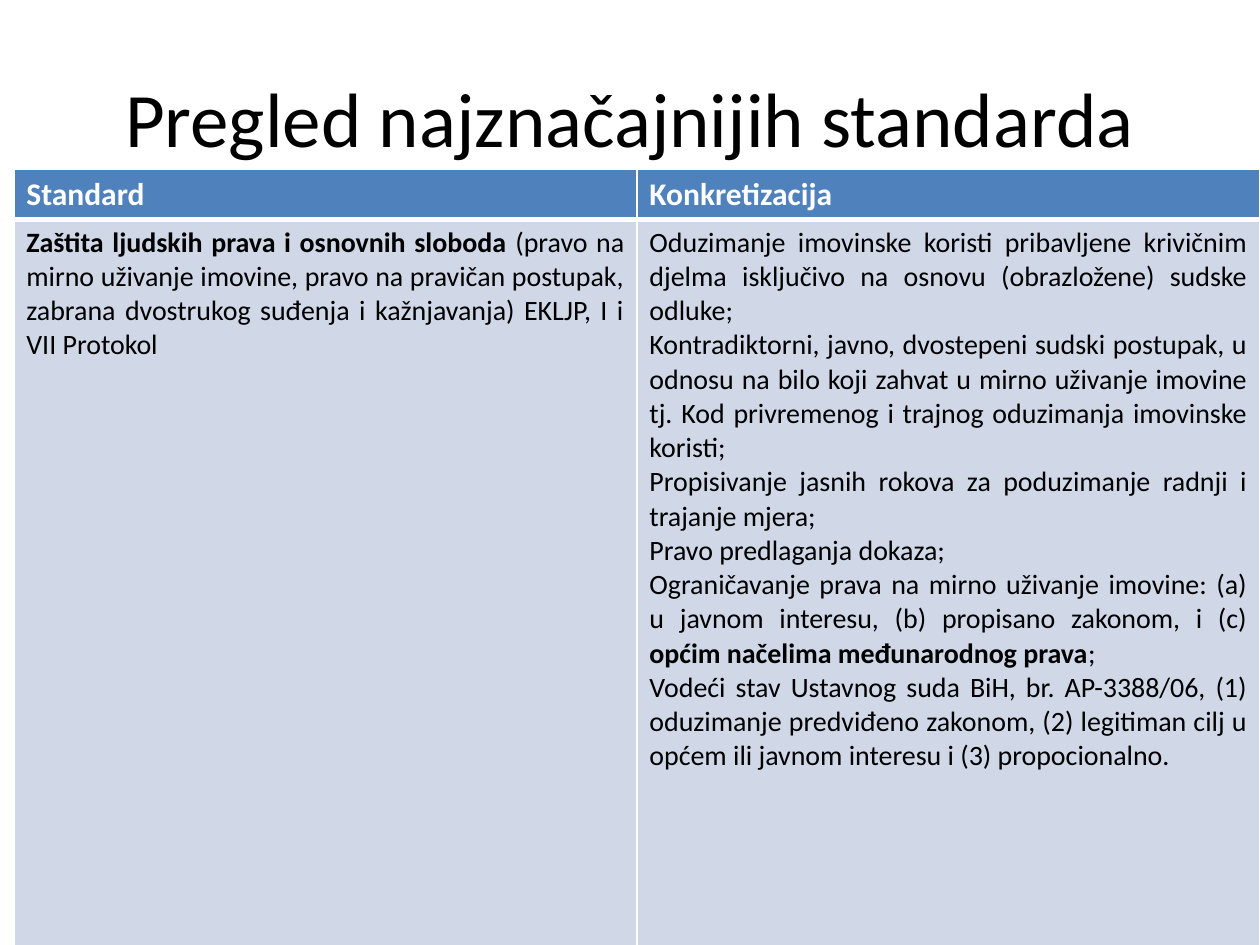
from lxml.etree import SubElement
from pptx import Presentation
from pptx.dml.color import RGBColor
from pptx.enum.text import MSO_ANCHOR, PP_ALIGN
from pptx.oxml.ns import qn
from pptx.util import Inches, Pt

FONT = "Calibri"
WHITE, BLACK = "FFFFFF", "000000"
HEADER_FILL, BODY_FILL = "4F81BD", "D0D8E8"

HEADINGS = ["Standard", "Konkretizacija"]
STANDARD = [
    [("Zaštita ljudskih prava i osnovnih sloboda ", True),
     ("(pravo na mirno uživanje imovine, pravo na pravičan postupak, zabrana "
      "dvostrukog suđenja i kažnjavanja) EKLJP, I i VII Protokol", False)],
]
REQUIREMENTS = [
    [("Oduzimanje imovinske koristi pribavljene krivičnim djelma isključivo na "
      "osnovu (obrazložene) sudske odluke;", False)],
    [("Kontradiktorni, javno, dvostepeni sudski postupak, u odnosu na bilo koji "
      "zahvat u mirno uživanje imovine tj. Kod privremenog i trajnog oduzimanja "
      "imovinske koristi;", False)],
    [("Propisivanje jasnih rokova za poduzimanje radnji i trajanje mjera;", False)],
    [("Pravo predlaganja dokaza;", False)],
    [("Ograničavanje prava na mirno uživanje imovine: (a) u javnom interesu, "
      "(b) propisano zakonom, i (c) ", False),
     ("općim načelima međunarodnog prava", True),
     (";", False)],
    [("Vodeći stav Ustavnog suda BiH, br. AP-3388/06, (1) oduzimanje predviđeno "
      "zakonom, (2) legitiman cilj u općem ili javnom interesu i (3) "
      "propocionalno.", False)],
]


def rgb(hex_color):
    """Turn a hex string into a colour."""
    return RGBColor.from_string(hex_color)


def write(frame, paragraphs, size, color, align):
    """Fill a text frame with paragraphs of (text, bold) runs."""
    for index, runs in enumerate(paragraphs):
        paragraph = frame.add_paragraph() if index else frame.paragraphs[0]
        paragraph.alignment = align
        for text, bold in runs:
            run = paragraph.add_run()
            run.text = text
            run.font.name = FONT
            run.font.size = Pt(size)
            run.font.bold = bold
            run.font.color.rgb = rgb(color)


def style_cell(cell, fill, bottom_width):
    """Give a cell white borders and a solid fill."""
    properties = cell._tc.get_or_add_tcPr()
    for side, width in (("L", 1), ("R", 1), ("T", 1), ("B", bottom_width)):
        border = SubElement(properties, qn(f"a:ln{side}"), w=str(Pt(width)))
        SubElement(SubElement(border, qn("a:solidFill")), qn("a:srgbClr"), val=WHITE)
    cell.fill.solid()
    cell.fill.fore_color.rgb = rgb(fill)


def add_title(slide, left, top, width, height):
    """Place the centred slide title in its box."""
    title = slide.shapes.add_textbox(left, top, width, height).text_frame
    title.word_wrap = True
    title.vertical_anchor = MSO_ANCHOR.MIDDLE
    write(title, [[("Pregled najznačajnijih standarda", False)]], 44, BLACK, PP_ALIGN.CENTER)


def add_standards(slide, left, top, width, height):
    """Place the table of standards and what each one requires."""
    standards = slide.shapes.add_table(2, 2, left, top, width, height).table
    header_height = Inches(0.4)
    standards.rows[0].height = header_height
    standards.rows[1].height = height - header_height
    for column, (heading, body) in enumerate(zip(HEADINGS, (STANDARD, REQUIREMENTS))):
        header_cell, body_cell = standards.cell(0, column), standards.cell(1, column)
        style_cell(header_cell, HEADER_FILL, 3)
        write(header_cell.text_frame, [[(heading, True)]], 18, WHITE, PP_ALIGN.LEFT)
        style_cell(body_cell, BODY_FILL, 1)
        write(body_cell.text_frame, body, 16, BLACK, PP_ALIGN.JUSTIFY)


def main():
    """Build the slide and save it."""
    deck = Presentation()
    deck.slide_width, deck.slide_height = Inches(10), Inches(7.5)
    slide = deck.slides.add_slide(deck.slide_layouts[6])
    add_title(slide, Inches(0.5), Inches(0.3), Inches(9), Inches(1.25))
    add_standards(slide, Inches(0.11), Inches(1.34), Inches(9.89), Inches(6.81))
    deck.save("out.pptx")


if __name__ == "__main__":
    main()
